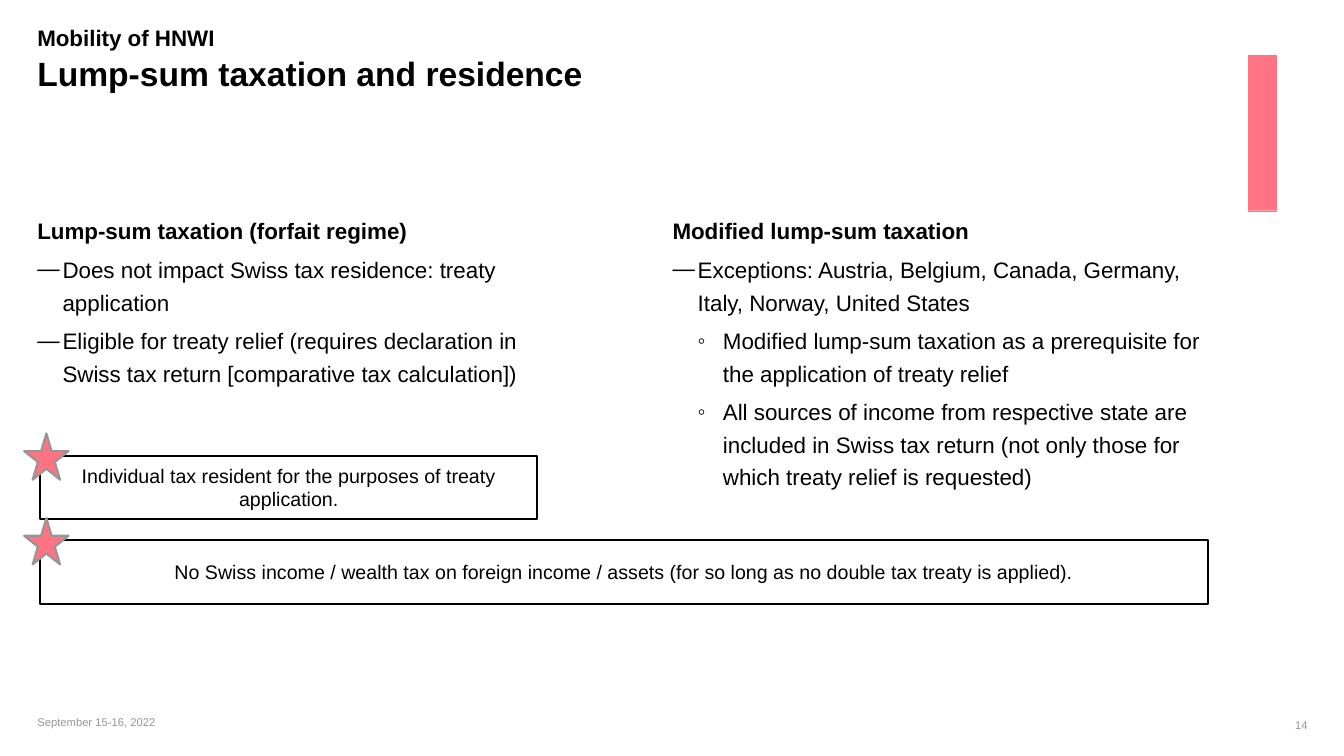
from lxml.etree import SubElement
from pptx import Presentation
from pptx.dml.color import RGBColor
from pptx.enum.shapes import MSO_SHAPE as Shape
from pptx.enum.text import MSO_ANCHOR as Anchor, MSO_AUTO_SIZE as Fit, PP_ALIGN as Align
from pptx.oxml.ns import qn
from pptx.util import Inches, Pt

BLACK = RGBColor(0x00, 0x00, 0x00)
GREY = RGBColor(0x96, 0x96, 0x96)
PINK = RGBColor(0xFF, 0x73, 0x82)

LEFT = 0.37
STEP = 0.25
MARKS = {1: "—", 2: "◦"}

LUMP = [
    (0, "Lump-sum taxation (forfait regime)"),
    (1, "Does not impact Swiss tax residence: treaty application"),
    (1, "Eligible for treaty relief (requires declaration in Swiss tax return "
        "[comparative tax calculation])"),
]
MODIFIED = [
    (0, "Modified lump-sum taxation"),
    (1, "Exceptions: Austria, Belgium, Canada, Germany, Italy, Norway, United States"),
    (2, "Modified lump-sum taxation as a prerequisite for the application of treaty relief"),
    (2, "All sources of income from respective state are included in Swiss tax return "
        "(not only those for which treaty relief is requested)"),
]


def place(shape, box):
    """Move a shape to a box given in inches."""
    shape.left, shape.top, shape.width, shape.height = map(Inches, box)


def frame(shape, anchor, inset=0):
    """Prepare the text frame of a shape and return it."""
    text = shape.text_frame
    text.word_wrap = True
    text.auto_size = Fit.NONE
    text.vertical_anchor = anchor
    text.margin_left = text.margin_right = Inches(inset)
    text.margin_top = text.margin_bottom = Inches(inset / 2)
    return text


def style(par, size, color=BLACK, bold=False, align=Align.LEFT, lead=1.0, gap=0):
    """Format a paragraph and its runs."""
    par.alignment = align
    par.line_spacing = lead
    par.space_before = Pt(gap)
    for run in par.runs:
        font = run.font
        font.name, font.size, font.bold = "Arial", Pt(size), bold
        font.color.rgb = color


def label(slide, box, words, anchor, **look):
    """Add one line of text in a box."""
    shape = slide.shapes.add_textbox(*map(Inches, box))
    text = frame(shape, anchor)
    text.text = words
    style(text.paragraphs[0], **look)


def paint(shape, fill, line, width):
    """Set the fill and outline of a shape."""
    shape.shadow.inherit = False
    if fill is None:
        shape.fill.background()
    else:
        shape.fill.solid()
        shape.fill.fore_color.rgb = fill
    shape.line.color.rgb = line
    shape.line.width = Pt(width)


def head(slide, box):
    """Fill the title and the line above it."""
    left, top, width, height = box
    label(slide, (left, top, width, 0.27), "Mobility of HNWI", Anchor.BOTTOM,
          size=16, bold=True, lead=1.22, gap=4)
    title = slide.shapes.title
    place(title, (left, top + 0.33, width, height - 0.33))
    text = frame(title, Anchor.TOP)
    text.text = "Lump-sum taxation and residence"
    style(text.paragraphs[0], size=24, bold=True, lead=0.9)


def column(holder, box, items):
    """Fill a body placeholder with a heading and its list."""
    place(holder, box)
    text = frame(holder, Anchor.TOP)
    text.text = "\n".join(words for _, words in items)
    for par, (depth, _) in zip(text.paragraphs, items):
        par.level = max(depth - 1, 0)
        style(par, size=16, bold=depth == 0, lead=1.22, gap=4)
        props = par._p.get_or_add_pPr()
        props.set("marL", str(Inches(STEP * depth)))
        props.set("indent", str(Inches(-STEP if depth else 0)))
        if depth:
            SubElement(props, qn("a:buFont")).set("typeface", "Arial")
            SubElement(props, qn("a:buChar")).set("char", MARKS[depth])
        else:
            SubElement(props, qn("a:buNone"))


def note(slide, box, words):
    """Add a framed statement."""
    shape = slide.shapes.add_shape(Shape.RECTANGLE, *map(Inches, box))
    paint(shape, None, BLACK, 1.5)
    text = frame(shape, Anchor.MIDDLE, 0.1)
    text.text = words
    style(text.paragraphs[0], size=14, align=Align.CENTER)


def star(slide, box):
    """Add a star on the top left corner of a box."""
    left, top = box[:2]
    spot = (left - 0.16, top - 0.22, 0.44, 0.46)
    paint(slide.shapes.add_shape(Shape.STAR_5_POINT, *map(Inches, spot)), PINK, GREY, 1.5)


def brand(slide, box):
    """Add the plain bar on the right."""
    paint(slide.shapes.add_shape(Shape.RECTANGLE, *map(Inches, box)), PINK, PINK, 0.12)


def foot(slide, box):
    """Add the date and the page number."""
    left, top, width, height = box
    label(slide, (left, top + 0.03, 3.15, 0.15), "September 15-16, 2022", Anchor.MIDDLE,
          size=8, color=GREY)
    label(slide, (left + width - 0.48, top, 0.48, height), "14", Anchor.BOTTOM,
          size=8, color=GREY, align=Align.RIGHT)


def main():
    """Build the slide and save it."""
    deck = Presentation()
    deck.slide_width, deck.slide_height = Inches(13.33), Inches(7.5)
    slide = deck.slides.add_slide(deck.slide_layouts[3])
    brand(slide, (12.38, 0.55, 0.28, 1.54))
    head(slide, (LEFT, 0.24, 10.24, 0.84))
    for num, items in enumerate((LUMP, MODIFIED)):
        column(slide.placeholders[num + 1], (LEFT + 6.3 * num, 2.1, 5.28, 4.41), items)
    foot(slide, (LEFT, 7.06, 12.6, 0.2))
    notes = [
        ((0.4, 5.36, 11.58, 0.63), "No Swiss income / wealth tax on foreign income / assets "
                                   "(for so long as no double tax treaty is applied)."),
        ((0.4, 4.52, 4.93, 0.63), "Individual tax resident for the purposes of treaty application."),
    ]
    for box, words in notes:
        note(slide, box, words)
    for box, _ in notes:
        star(slide, box)
    deck.save("out.pptx")


if __name__ == "__main__":
    main()
